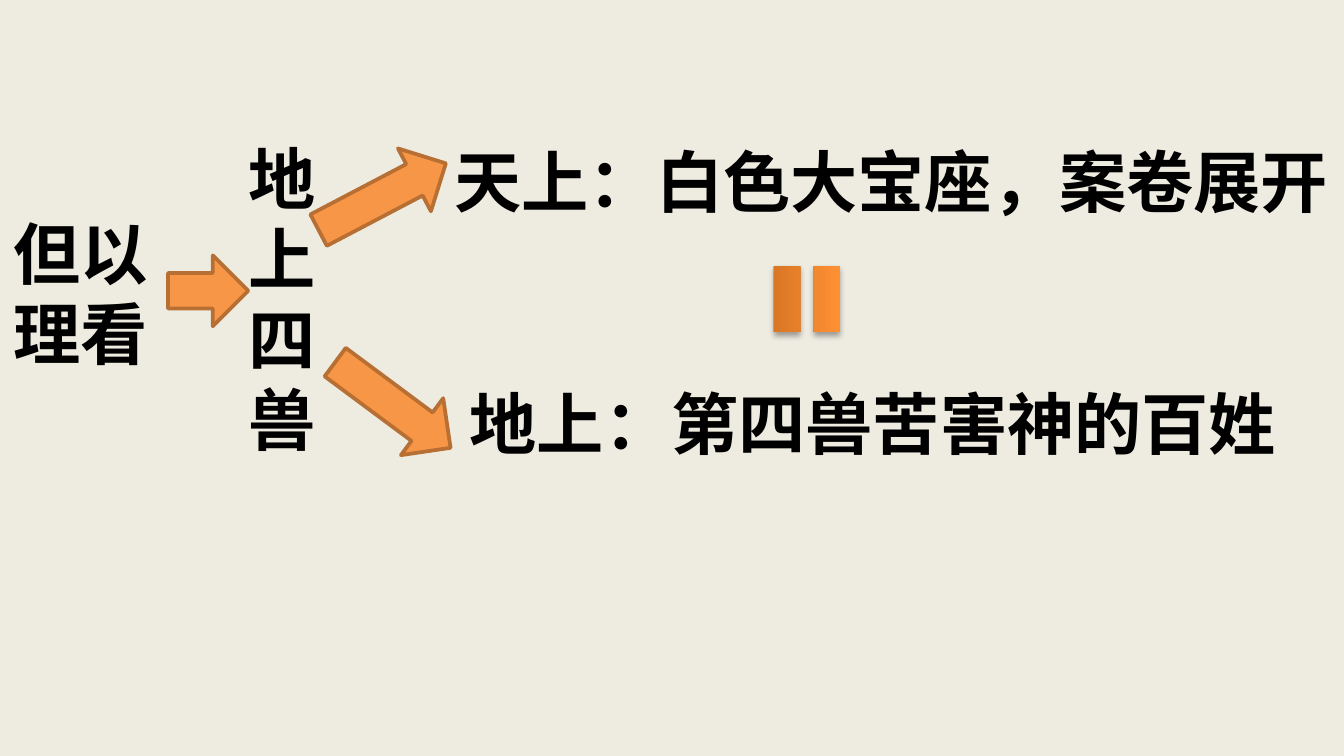
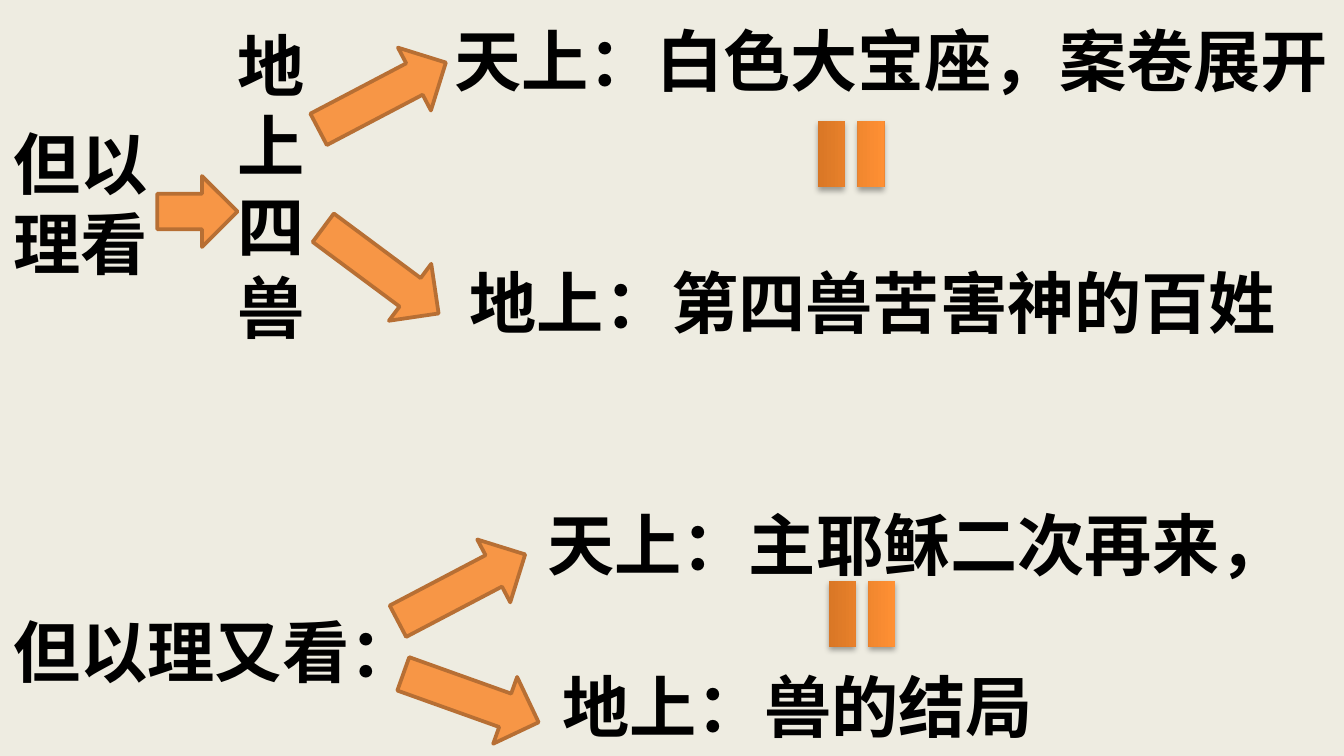
"""Build two slides that pair scenes in heaven with scenes on earth."""
import dataclasses

import lxml.etree
import pptx
import pptx.dml.color
import pptx.enum.lang
import pptx.enum.shapes
import pptx.enum.text
import pptx.oxml
import pptx.oxml.ns
import pptx.util

Pt = pptx.util.Pt
RGB = pptx.dml.color.RGBColor.from_string
SHAPE = pptx.enum.shapes.MSO_SHAPE
qn = pptx.oxml.ns.qn


@dataclasses.dataclass(frozen=True)
class Theme:
    width: float = 720
    height: float = 405
    ground: str = "EEECE1"
    ink: str = "000000"
    arrow: str = "F79646"
    arrow_line: str = "B76F34"
    equal_stops: tuple = ((0, "CC6E20"), (80, "FF9034"), (100, "FF9136"))
    font: str = "Calibri"
    alt_font: str = "Arial"
    size: float = 36
    line: float = 43.2
    inset: float = 7.2
    top_inset: float = 5


T = Theme()
UP, DOWN, GENTLE, FLAT = 332.3, 36.6, 19.7, 0
LONG_ARROW, SHORT_ARROW, EQUAL = (77, 38), (43, 38), (48, 60)
LABEL, COLUMN, AGAIN = (102, 78), (54, 120), (234, 119)
FIRST_VISION = [
    (236.3, 0, "天上：白色大宝座，案卷展开"),
    (244.4, 2, "地上：第四兽苦害神的百姓"),
]
SECOND_VISION = [
    (286, 2, "天上：主耶稣二次再来，"),
    (294.1, 1, "地上：兽的结局"),
]

SLIDES = [
    {
        "title": FIRST_VISION,
        "lines_below": 2,
        "labels": [
            ("但以理看", 0, 136.8, LABEL, 1, T.font),
            ("地上四兽", 126, 118.8, COLUMN, 1, T.font),
        ],
        "arrows": [
            (166.3, 86.4, LONG_ARROW, UP),
            (172, 198, LONG_ARROW, DOWN),
            (90, 136.8, SHORT_ARROW, FLAT),
        ],
        "equals": [(408.2, 130.3)],
    },
    {
        "title": FIRST_VISION + SECOND_VISION,
        "lines_below": 0,
        "labels": [
            ("但以理看", 0, 88.6, LABEL, 1, T.font),
            ("但以理又看：", 0, 286.5, AGAIN, 0, T.alt_font),
            ("地上四兽", 120.2, 58.3, COLUMN, 1, T.font),
        ],
        "arrows": [
            (166.3, 32.4, LONG_ARROW, UP),
            (208.8, 295.9, LONG_ARROW, UP),
            (165.6, 126, LONG_ARROW, DOWN),
            (213.8, 355, LONG_ARROW, GENTLE),
            (84.2, 94.3, SHORT_ARROW, FLAT),
        ],
        "equals": [(437.8, 298.8), (432, 52.6)],
    },
]


def box(x, y, size):
    """Return a position and size in points as lengths."""
    return [Pt(v) for v in (x, y, *size)]


def write(sp, lines, lines_below, font):
    """Fill a shape with (indent, lines above, text) rows, kept clear of its foot."""
    tf = sp.text_frame
    tf.word_wrap = True
    tf.auto_size = pptx.enum.text.MSO_AUTO_SIZE.NONE
    tf.vertical_anchor = pptx.enum.text.MSO_ANCHOR.MIDDLE
    tf.margin_left, tf.margin_right = Pt(T.inset), 0
    tf.margin_top, tf.margin_bottom = Pt(T.top_inset), Pt(lines_below * T.line)
    tf.text = "\n".join(text for _, _, text in lines)
    for p, (indent, above, _) in zip(tf.paragraphs, lines):
        p.alignment = pptx.enum.text.PP_ALIGN.LEFT
        p.line_spacing = Pt(T.line)
        p.space_before = Pt(above * T.line)
        pPr = p._p.get_or_add_pPr()
        pPr.set("marL", str(int(Pt(indent))))
        pPr.set("indent", "0")
        for r in p.runs:
            r.font.size, r.font.bold, r.font.name = Pt(T.size), True, font
            r.font.color.rgb = RGB(T.ink)
            r.font.language_id = pptx.enum.lang.MSO_LANGUAGE_ID.SIMPLIFIED_CHINESE
            lxml.etree.SubElement(r._r.rPr, qn("a:ea"), typeface=font)


def add_arrow(slide, x, y, size, rotation):
    """Add an outlined block arrow."""
    sp = slide.shapes.add_shape(SHAPE.RIGHT_ARROW, *box(x, y, size))
    sp.rotation = rotation
    sp.shadow.inherit = False
    sp.fill.solid()
    sp.fill.fore_color.rgb = RGB(T.arrow)
    sp.line.color.rgb = RGB(T.arrow_line)
    sp.line.width = Pt(2)


def add_equal(slide, x, y):
    """Add an upright equals sign with a gradient and a soft shadow."""
    sp = slide.shapes.add_shape(SHAPE.MATH_EQUAL, *box(x, y, EQUAL))
    sp.rotation = 90
    sp.line.fill.background()
    sp.fill.background()
    sp.shadow.inherit = False
    ns = pptx.oxml.ns.nsdecls("a")
    stops = "".join(
        f'<a:gs pos="{pos * 1000}"><a:srgbClr val="{color}"/></a:gs>'
        for pos, color in T.equal_stops
    )
    gradient = pptx.oxml.parse_xml(
        f'<a:gradFill {ns} rotWithShape="1"><a:gsLst>{stops}</a:gsLst>'
        '<a:lin ang="16200000" scaled="0"/></a:gradFill>'
    )
    shadow = pptx.oxml.parse_xml(
        f'<a:outerShdw {ns} blurRad="{int(Pt(3.1))}" dist="{int(Pt(1.8))}" '
        'dir="5400000" rotWithShape="0"><a:srgbClr val="000000">'
        '<a:alpha val="35000"/></a:srgbClr></a:outerShdw>'
    )
    spPr = sp._element.spPr
    spPr.replace(spPr.find(qn("a:noFill")), gradient)
    spPr.find(qn("a:effectLst")).append(shadow)


def build_slide(prs, content):
    """Add one slide from its content."""
    slide = prs.slides.add_slide(prs.slide_layouts[5])
    title = slide.shapes.title
    title.left, title.top, title.width, title.height = box(0, 0, (T.width, T.height))
    write(title, content["title"], content["lines_below"], T.font)
    for text, x, y, size, lines_below, font in content["labels"]:
        sp = slide.shapes.add_textbox(*box(x, y, size))
        write(sp, [(0, 0, text)], lines_below, font)
    for arrow in content["arrows"]:
        add_arrow(slide, *arrow)
    for x, y in content["equals"]:
        add_equal(slide, x, y)


def main():
    """Build and save the presentation."""
    prs = pptx.Presentation()
    prs.slide_width, prs.slide_height = Pt(T.width), Pt(T.height)
    ground = prs.slide_master.background.fill
    ground.solid()
    ground.fore_color.rgb = RGB(T.ground)
    for content in SLIDES:
        build_slide(prs, content)
    prs.save("out.pptx")


if __name__ == "__main__":
    main()
